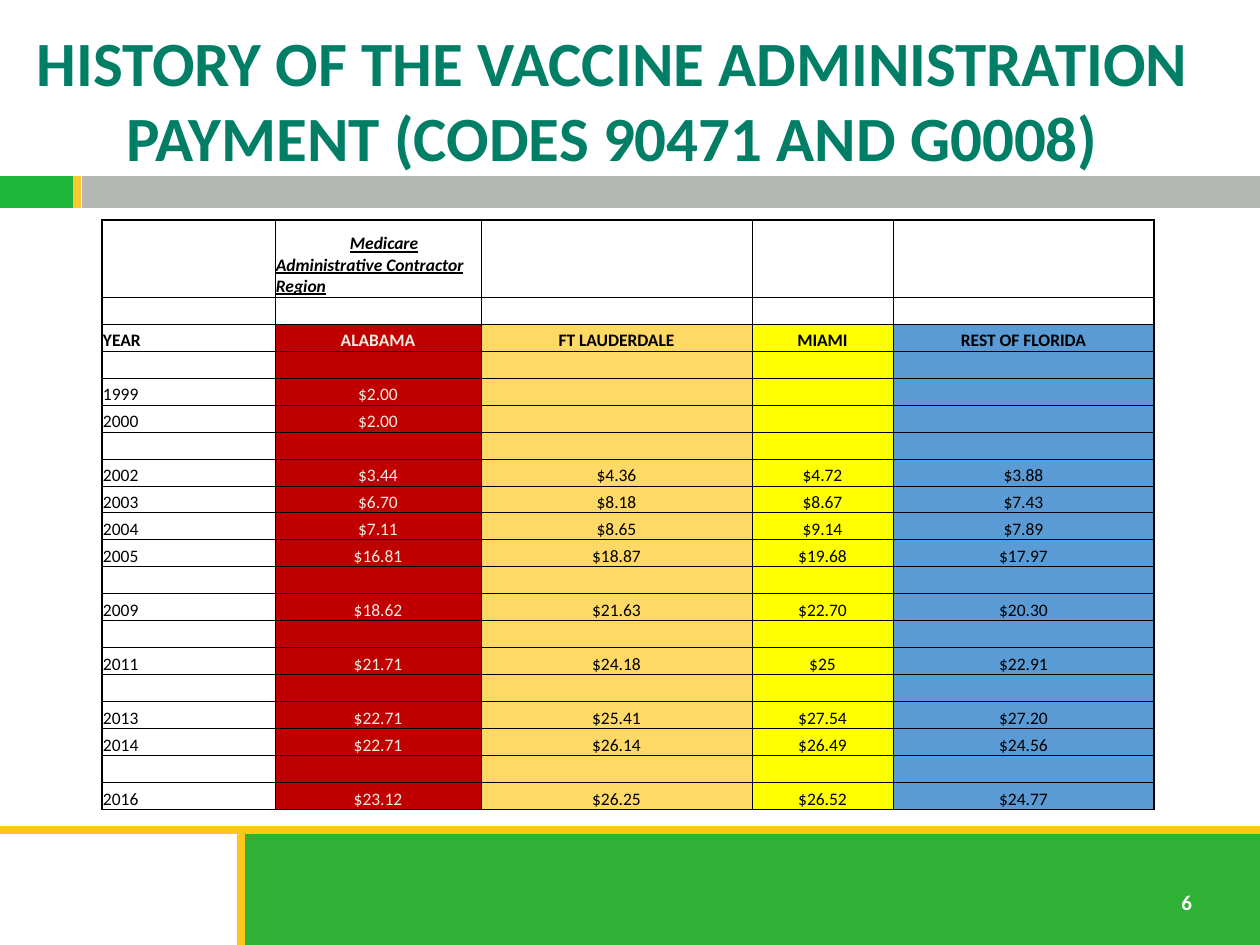
from lxml.etree import SubElement
from pptx import Presentation
from pptx.dml.color import RGBColor
from pptx.enum.shapes import MSO_CONNECTOR, MSO_SHAPE
from pptx.enum.text import MSO_ANCHOR, PP_ALIGN
from pptx.oxml.ns import qn
from pptx.util import Pt

HUES = {
    "white": "FFFFFF", "black": "000000", "teal": "007E66", "cream": "EEECE1",
    "lime": "1EB53A", "green": "2EB135", "gray": "B5B7B4",
    "gold": "FFC61E", "amber": "FFC82E",
    "red": "C00000", "sand": "FFD966", "yellow": "FFFF00", "blue": "5B9BD5",
}


def px(num):
    return round(num * 914400 / 126)


def write(frame, text, size=10, hue="black", bold=False, slant=False, line=False,
          align=PP_ALIGN.LEFT, anchor=MSO_ANCHOR.BOTTOM, wrap=True):
    frame.word_wrap = wrap
    frame.vertical_anchor = anchor
    para = frame.paragraphs[0]
    para.alignment = align
    if not text:
        SubElement(para._p, qn("a:endParaRPr"), sz=str(size * 100))
        return
    run = para.add_run()
    run.text = text
    font = run.font
    font.name, font.size = "Calibri", Pt(size)
    font.bold, font.italic, font.underline = bold, slant, line
    font.color.rgb = RGBColor.from_string(HUES[hue])


deck = Presentation()
deck.slide_width, deck.slide_height = px(1260), px(945)
slide = deck.slides.add_slide(deck.slide_layouts[6])
shapes = slide.shapes

bars = [
    (0, 170, 1260, 44, "white"),
    (0, 176, 73, 32, "lime"),
    (82, 176, 1178, 32, "gray"),
    (241, 830, 1019, 115, "green"),
]
for x, y, w, h, hue in bars:
    bar = shapes.add_shape(MSO_SHAPE.RECTANGLE, px(x), px(y), px(w), px(h))
    bar.shadow.inherit = False
    bar.fill.solid()
    bar.fill.fore_color.rgb = RGBColor.from_string(HUES[hue])
    bar.line.fill.background()

rules = [
    (0, 830, 1260, 830, "gold"),
    (241, 830, 241, 945, "gold"),
    (77, 176, 77, 208, "amber"),
]
for x, y, right, low, hue in rules:
    rule = shapes.add_connector(MSO_CONNECTOR.STRAIGHT, px(x), px(y), px(right), px(low))
    rule.line.color.rgb = RGBColor.from_string(HUES[hue])
    rule.line.width = Pt(4.5)
    SubElement(rule._element.spPr, qn("a:effectLst"))

page = shapes.add_textbox(px(1169), px(883), px(50), px(38))
write(page.text_frame, "6", size=12, hue="white", bold=True,
      anchor=MSO_ANCHOR.TOP, wrap=False)

title = shapes.add_textbox(px(18), px(31), px(1189), px(136))
write(title.text_frame,
      "HISTORY OF THE VACCINE ADMINISTRATION PAYMENT (CODES 90471 AND G0008)",
      size=36, hue="teal", bold=True, align=PP_ALIGN.CENTER, anchor=MSO_ANCHOR.MIDDLE)

rows = [
    ["", "Medicare Administrative Contractor Region"],
    [],
    ["YEAR", "ALABAMA", "FT LAUDERDALE", "MIAMI", "REST OF FLORIDA"],
    [],
    ["1999", "$2.00"],
    ["2000", "$2.00"],
    [],
    ["2002", "$3.44", "$4.36", "$4.72", "$3.88"],
    ["2003", "$6.70", "$8.18", "$8.67", "$7.43"],
    ["2004", "$7.11", "$8.65", "$9.14", "$7.89"],
    ["2005", "$16.81", "$18.87", "$19.68", "$17.97"],
    [],
    ["2009", "$18.62", "$21.63", "$22.70", "$20.30"],
    [],
    ["2011", "$21.71", "$24.18", "$25", "$22.91"],
    [],
    ["2013", "$22.71", "$25.41", "$27.54", "$27.20"],
    ["2014", "$22.71", "$26.14", "$26.49", "$24.56"],
    [],
    ["2016", "$23.12", "$26.25", "$26.52", "$24.77"],
]
wide = [173, 206, 271, 141, 261]
tall = [77] + [27] * 19
fills = ["white", "red", "sand", "yellow", "blue"]
last, end = len(rows) - 1, len(wide) - 1

grid = shapes.add_table(len(rows), len(wide), px(102), px(220),
                        px(sum(wide)), px(sum(tall))).table
grid.first_row = grid.horz_banding = False
for col, w in zip(grid.columns, wide):
    col.width = px(w)
for row, h in zip(grid.rows, tall):
    row.height = px(h)

for r, texts in enumerate(rows):
    for c, fill in enumerate(fills):
        cell = grid.cell(r, c)
        cell.margin_left = cell.margin_right = cell.margin_top = px(1)
        cell.margin_bottom = 0
        edges = {"L": c == 0, "R": c == end, "T": r == 0, "B": r == last}
        for side, outer in edges.items():
            edge = SubElement(cell._tc.get_or_add_tcPr(), qn(f"a:ln{side}"),
                              w=str(Pt(1 if outer else 0.5)))
            SubElement(SubElement(edge, qn("a:solidFill")), qn("a:srgbClr"),
                       val=HUES["black"])
        cell.fill.solid()
        cell.fill.fore_color.rgb = RGBColor.from_string(HUES[fill if r > 1 else "white"])
        cell.vertical_anchor = MSO_ANCHOR.BOTTOM
        write(cell.text_frame, texts[c] if c < len(texts) else "",
              hue="cream" if c == 1 and r > 1 else "black",
              bold=r < 3, slant=r == 0, line=r == 0,
              align=PP_ALIGN.CENTER if c and r > 1 else PP_ALIGN.LEFT)

region = grid.cell(0, 1).text_frame.paragraphs[0]
region._p.get_or_add_pPr().set("indent", str(px(74)))

deck.save("out.pptx")
